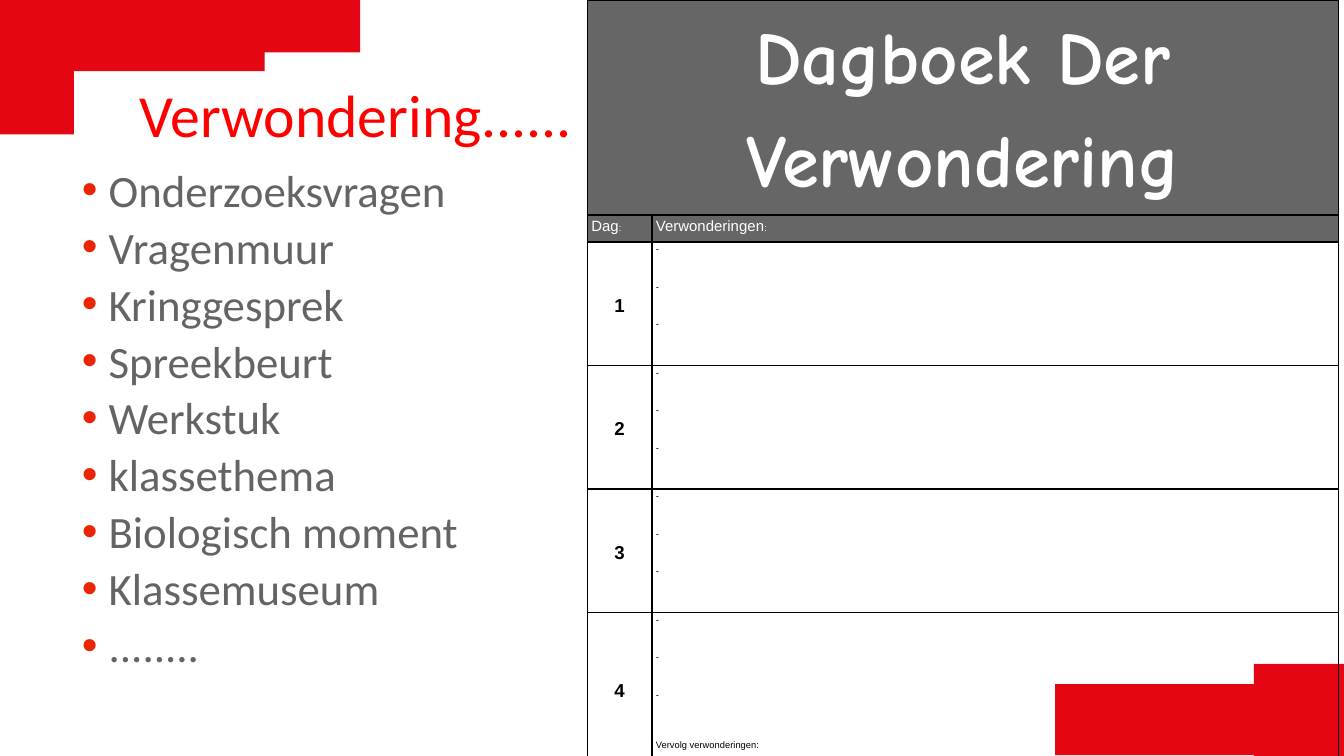
"""Builds a slide on wonder in class, with a list of ideas and a diary table."""
from lxml import etree
from pptx import Presentation
from pptx.dml.color import RGBColor
from pptx.enum.shapes import MSO_SHAPE
from pptx.enum.text import MSO_ANCHOR, PP_ALIGN
from pptx.oxml.ns import qn
from pptx.util import Inches, Pt

RECTANGLE = MSO_SHAPE.RECTANGLE
TOP, MIDDLE = MSO_ANCHOR.TOP, MSO_ANCHOR.MIDDLE
LEFT, CENTER = PP_ALIGN.LEFT, PP_ALIGN.CENTER

COLORS = {"red": "E40613", "title": "FF0000", "bullet": "EB2403", "body": "646464",
          "header": "666666", "white": "FFFFFF", "black": "000000"}

CORNER_BLOCKS = [(7.85, 5.09, 2.15, 0.53), (9.33, 4.94, 0.67, 0.69),
                 (0, 0, 2.68, 0.39), (0, 0, 1.97, 0.53), (0, 0, 0.55, 1)]
TITLE = "Verwondering......"
IDEAS = ["Onderzoeksvragen", "Vragenmuur", "Kringgesprek", "Spreekbeurt", "Werkstuk",
         "klassethema", "Biologisch moment", "Klassemuseum", "........"]
DIARY_TITLE = "Dagboek Der Verwondering"
HEADINGS = ["Dag", "Verwonderingen"]
DAYS = ["1", "2", "3", "4"]
DASHES = ["-"] * 3
CONTINUED = "Vervolg verwonderingen:"
COLUMN_WIDTHS = [0.48, 5.11]
ROW_HEIGHTS = [1.48, 0.2, 0.92, 0.92, 0.92, 1.13]
DASH_GAP, CONTINUED_GAP = 13.4, 20


def rgb(name):
    return RGBColor.from_string(COLORS[name])


def style(font, name, size, color, bold=False):
    font.name, font.size, font.bold = name, Pt(size), bold
    font.color.rgb = rgb(color)


def add_bullet(para):
    properties = para._p.get_or_add_pPr()
    properties.set("marL", str(Inches(0.2)))
    properties.set("indent", str(Inches(-0.2)))
    color = etree.SubElement(properties, qn("a:buClr"))
    etree.SubElement(color, qn("a:srgbClr"), val=COLORS["bullet"])
    etree.SubElement(properties, qn("a:buFont"), typeface="Arial")
    etree.SubElement(properties, qn("a:buChar"), char="•")


def format_cell(cell, anchor=TOP, fill=None):
    cell.margin_left = cell.margin_right = Inches(0.03)
    cell.margin_top = cell.margin_bottom = 0
    cell.vertical_anchor = anchor
    properties = cell._tc.get_or_add_tcPr()
    for side in ("lnL", "lnR", "lnT", "lnB"):
        line = etree.SubElement(properties, qn(f"a:{side}"), w=str(Pt(1)))
        solid = etree.SubElement(line, qn("a:solidFill"))
        etree.SubElement(solid, qn("a:srgbClr"), val=COLORS["black"])
    if fill:
        cell.fill.solid()
        cell.fill.fore_color.rgb = rgb(fill)
    else:
        cell.fill.background()


def write_cell(cell, lines, name, size, color, bold=False, align=LEFT, gaps=(0,)):
    frame = cell.text_frame
    frame.text = "\n".join(lines)
    for para, gap in zip(frame.paragraphs, gaps):
        para.alignment, para.line_spacing = align, 1.2
        para.space_before = Pt(gap)
        style(para.font, name, size, color, bold)


def add_blocks(slide):
    for area in CORNER_BLOCKS:
        block = slide.shapes.add_shape(RECTANGLE, *map(Inches, area))
        block.shadow.inherit = False
        block.fill.solid()
        block.fill.fore_color.rgb = rgb("red")
        block.line.fill.background()


def add_title(slide):
    title = slide.shapes.title
    title.left, title.top, title.width, title.height = map(Inches, (0.94, 0.47, 8.56, 0.75))
    title.text_frame.text = TITLE
    title.text_frame.vertical_anchor = MIDDLE
    para = title.text_frame.paragraphs[0]
    para.alignment = LEFT
    style(para.font, "Calibri", 32, "title")


def add_ideas(slide):
    frame = slide.shapes.add_textbox(*map(Inches, (0.51, 1.16, 3.39, 3.87))).text_frame
    frame.word_wrap = True
    frame.text = "\n".join(IDEAS)
    for index, para in enumerate(frame.paragraphs):
        add_bullet(para)
        para.space_before = Pt(1.7 if index else 0)
        style(para.font, "Calibri", 24, "body")


def add_diary(slide):
    table = slide.shapes.add_table(
        len(ROW_HEIGHTS), len(COLUMN_WIDTHS), Inches(4.37), 0,
        Inches(sum(COLUMN_WIDTHS)), Inches(sum(ROW_HEIGHTS))).table
    table.first_row = table.horz_banding = False
    for column, width in zip(table.columns, COLUMN_WIDTHS):
        column.width = Inches(width)
    for row, height in zip(table.rows, ROW_HEIGHTS):
        row.height = Inches(height)

    for index, heading in enumerate(HEADINGS):
        format_cell(table.cell(0, index), fill="header")
        cell = table.cell(1, index)
        format_cell(cell, fill="header")
        write_cell(cell, [heading], "Arial", 8, "white")
        span = cell.text_frame.paragraphs[0].add_run()
        span.text = ":"
        span.font.size = Pt(5)
    table.cell(0, 0).merge(table.cell(0, 1))
    write_cell(table.cell(0, 0), [DIARY_TITLE], "Comic Neue", 40, "white", True, CENTER)

    for row, day in enumerate(DAYS, start=2):
        day_cell, notes_cell = table.cell(row, 0), table.cell(row, 1)
        format_cell(day_cell, MIDDLE)
        write_cell(day_cell, [day], "Arial", 10, "black", True, CENTER)
        format_cell(notes_cell)
        lines = DASHES + ([CONTINUED] if day == DAYS[-1] else [])
        write_cell(notes_cell, lines, "Arial", 5, "black",
                   gaps=(0, DASH_GAP, DASH_GAP, CONTINUED_GAP))


def main():
    deck = Presentation()
    deck.slide_width = Inches(10)
    deck.slide_height = deck.slide_width * 9 // 16
    slide = deck.slides.add_slide(deck.slide_layouts[5])
    add_blocks(slide)
    add_title(slide)
    add_ideas(slide)
    add_diary(slide)
    deck.save("out.pptx")


if __name__ == "__main__":
    main()
